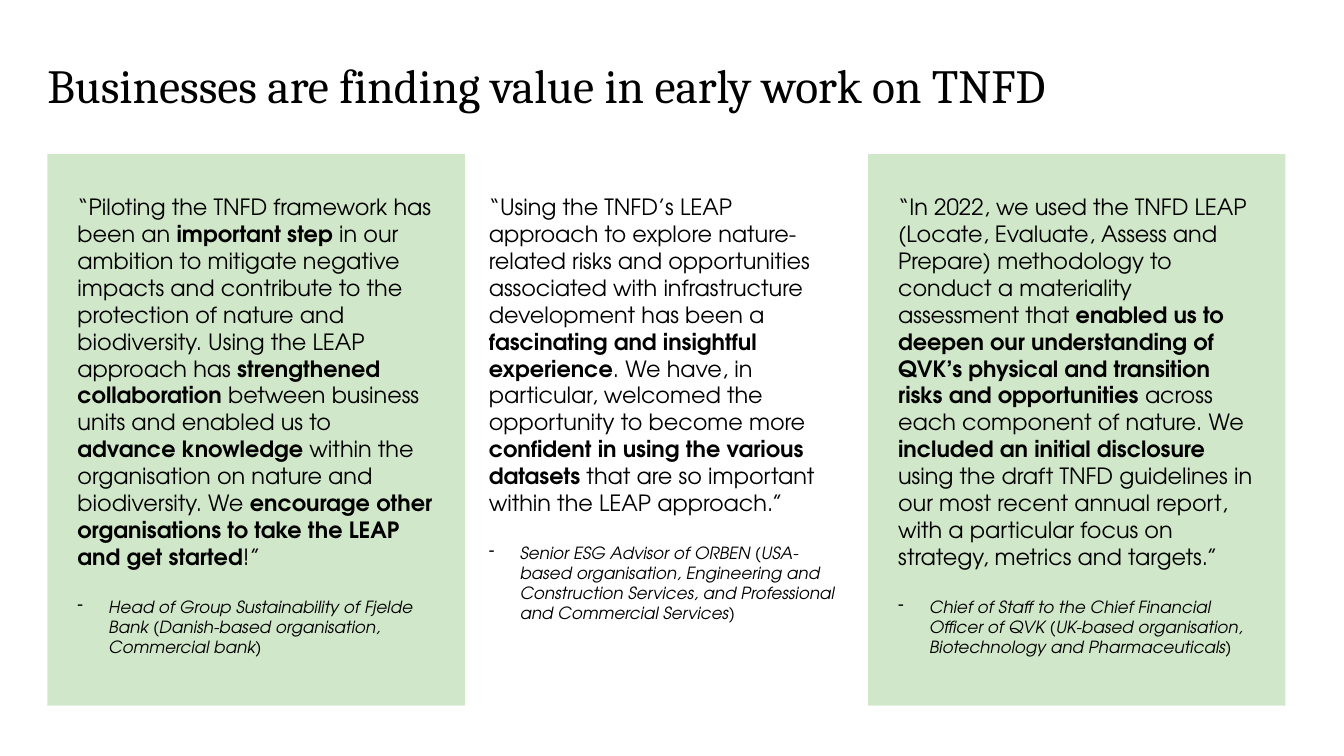
from pptx import Presentation
from pptx import util as u
from pptx.dml import color
from pptx.enum import shapes, text
from pptx.oxml import ns
from lxml import etree

TITLE = "Businesses are finding value in early work on TNFD"
QUOTES = [
    {
        "quote": "“Piloting the TNFD framework has been an **important step **in our ambition to "
                 "mitigate negative impacts and contribute to the protection of nature and "
                 "biodiversity. Using the LEAP approach has **strengthened collaboration **between "
                 "business units and enabled us to **advance knowledge** within the organisation on "
                 "nature and biodiversity. We **encourage other organisations to take the LEAP and "
                 "get started**!”",
        "speaker": "Head of Group Sustainability of Fjelde Bank (Danish-based organisation, "
                   "Commercial bank)",
        "left": 0.67, "height": 4.91, "panel": True,
    },
    {
        "quote": "“Using the TNFD’s LEAP approach to explore nature-related risks and opportunities "
                 "associated with infrastructure development has been a **fascinating and insightful "
                 "experience**. We have, in particular, welcomed the opportunity to become more "
                 "**confident in using the various datasets **that are so important within the LEAP "
                 "approach.”",
        "speaker": "Senior ESG Advisor of ORBEN (USA-based organisation, Engineering and "
                   "Construction Services, and Professional and Commercial Services)",
        "left": 4.75, "height": 4.14, "panel": False,
    },
    {
        "quote": "“In 2022, we used the TNFD LEAP (Locate, Evaluate, Assess and Prepare) methodology "
                 "to conduct a materiality assessment that **enabled us to deepen our understanding "
                 "of QVK’s physical and transition risks and opportunities **across each component "
                 "of nature. We **included an initial disclosure **using the draft TNFD guidelines "
                 "in our most recent annual report, with a particular focus on strategy, metrics "
                 "and targets.”",
        "speaker": "Chief of Staff to the Chief Financial Officer of QVK (UK-based organisation, "
                   "Biotechnology and Pharmaceuticals)",
        "left": 8.81, "height": 4.75, "panel": True,
    },
]
BODY_FONT, TITLE_FONT = "TeX Gyre Adventor", "Cambria"
BLACK, GREEN = "000000", "D1E7C9"
PANEL_TOP, PANEL_WIDTH, PANEL_HEIGHT, PANEL_PAD = 1.53, 4.14, 5.47, 0.2
QUOTE_TOP, QUOTE_WIDTH = 1.87, PANEL_WIDTH - 2 * PANEL_PAD
INDENT = u.Inches(0.31)


def rgb(value):
    return color.RGBColor.from_string(value)


def add_panel(page, left):
    panel = page.shapes.add_shape(
        shapes.MSO_SHAPE.RECTANGLE,
        *map(u.Inches, (left, PANEL_TOP, PANEL_WIDTH, PANEL_HEIGHT)))
    panel.shadow.inherit = False
    panel.fill.solid()
    panel.fill.fore_color.rgb = rgb(GREEN)
    panel.line.fill.background()


def add_box(page, left, top, width, height):
    box = page.shapes.add_textbox(*map(u.Inches, (left, top, width, height)))
    box.text_frame.word_wrap = True
    return box.text_frame


def write(para, words, size, font=BODY_FONT, italic=False):
    for index, part in enumerate(words.split("**")):
        span = para.add_run()
        span.text = part
        span.font.name = font
        span.font.size = u.Pt(size)
        span.font.bold = index % 2 == 1
        span.font.italic = italic
        span.font.color.rgb = rgb(BLACK)


def add_dash(para):
    properties = para._p.get_or_add_pPr()
    properties.set("marL", str(INDENT))
    properties.set("indent", str(-INDENT))
    etree.SubElement(properties, ns.qn("a:buFontTx"))
    etree.SubElement(properties, ns.qn("a:buChar")).set("char", "-")


def main():
    deck = Presentation()
    deck.slide_width, deck.slide_height = u.Inches(13.33), u.Inches(7.5)
    page = deck.slides.add_slide(deck.slide_layouts[6])

    title = add_box(page, 0.47, 0.49, 12.43, 0.76)
    title.margin_left = 0
    title.vertical_anchor = text.MSO_ANCHOR.MIDDLE
    title.paragraphs[0].line_spacing = 0.9
    write(title.paragraphs[0], TITLE, 34, font=TITLE_FONT)

    for entry in QUOTES:
        if entry["panel"]:
            add_panel(page, entry["left"] - PANEL_PAD)
        frame = add_box(page, entry["left"], QUOTE_TOP, QUOTE_WIDTH, entry["height"])
        frame.auto_size = text.MSO_AUTO_SIZE.SHAPE_TO_FIT_TEXT
        write(frame.paragraphs[0], entry["quote"], 16)
        speaker = frame.add_paragraph()
        speaker.space_before = u.Pt(19.2)
        add_dash(speaker)
        write(speaker, entry["speaker"], 12, italic=True)

    deck.save("out.pptx")


if __name__ == "__main__":
    main()
